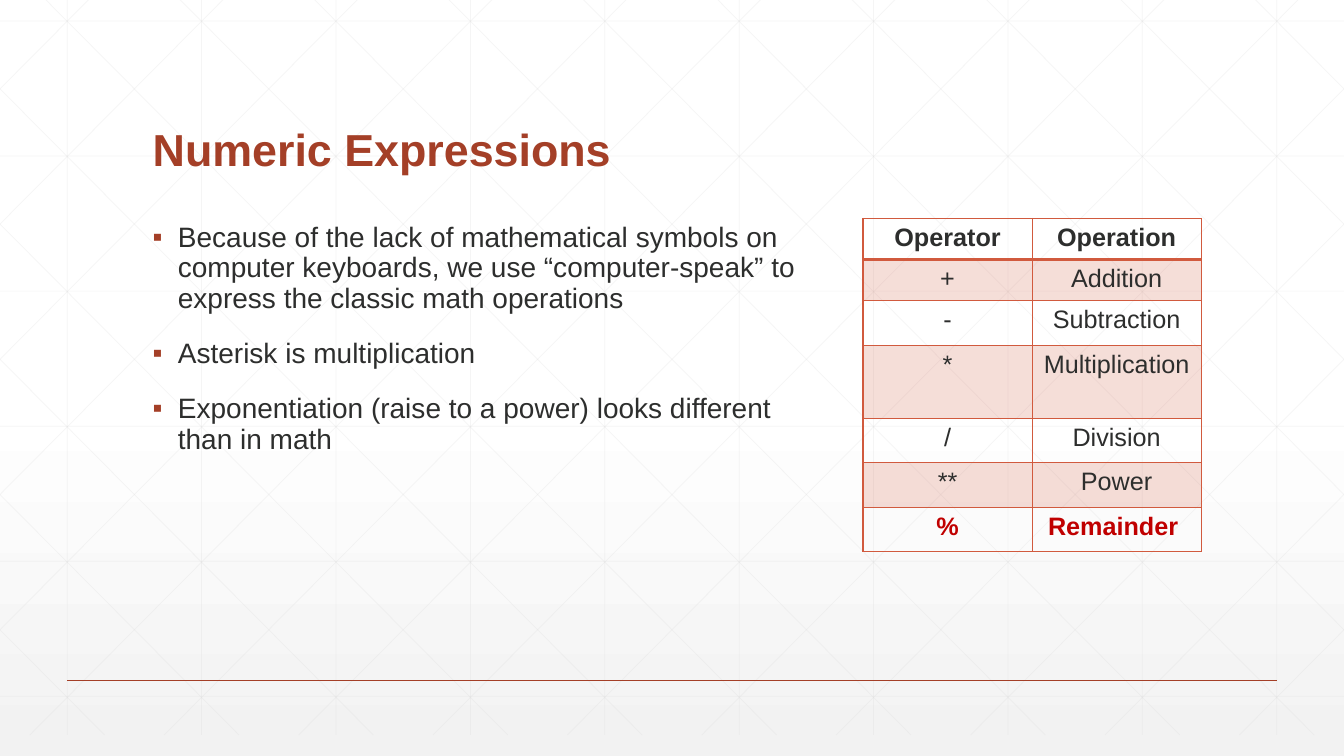
from copy import deepcopy

from lxml.etree import SubElement
from pptx import Presentation
from pptx.dml.color import RGBColor
from pptx.enum.shapes import MSO_CONNECTOR
from pptx.enum.text import MSO_ANCHOR, PP_ALIGN
from pptx.oxml.ns import qn
from pptx.util import Inches, Pt

COLUMNS, ROWS = 160, 90
COLORS = {
    "white": "FFFFFF",
    "haze": "F2F2F2",
    "mesh": "D9D9D9",
    "rust": "A43F27",
    "coral": "D15A3E",
    "ink": "2D2E2D",
    "alert": "C00000",
}
FORMATS = {
    "title": {"size": Pt(32), "bold": True, "name": "Arial"},
    "body": {"size": Pt(20), "bold": False, "name": "Arial"},
    "cell": {"size": Pt(18), "bold": False, "name": "Arial"},
    "strong": {"size": Pt(18), "bold": True, "name": "Arial"},
}
POINTS = [
    "Because of the lack of mathematical symbols on computer keyboards, "
    "we use “computer-speak” to express the classic math operations",
    "Asterisk is multiplication",
    "Exponentiation (raise to a power) looks different than in math",
]
OPERATORS = [
    ("Operator", "Operation"),
    ("+", "Addition"),
    ("-", "Subtraction"),
    ("*", "Multiplication"),
    ("/", "Division"),
    ("**", "Power"),
    ("%", "Remainder "),
]
ROW_HEIGHTS = [4.9, 4.9, 5.3, 8.7, 5.3, 5.3, 5.3]


def rgb(color):
    return RGBColor.from_string(COLORS[color])


def set_values(target, values):
    for attribute, value in values.items():
        setattr(target, attribute, value)


def set_alpha(element, percent):
    SubElement(element.find(".//" + qn("a:srgbClr")), qn("a:alpha"), val=str(percent * 1000))


class GridSlide:
    """Draws styled elements on one slide measured in grid columns and rows."""

    def __init__(self, deck):
        set_values(deck, {"slide_width": Inches(13.333), "slide_height": Inches(7.5)})
        self.column = deck.slide_width / COLUMNS
        self.row = deck.slide_height / ROWS
        self.slide = deck.slides.add_slide(deck.slide_layouts[6])

    def place(self, *lengths):
        return [round(length * (self.row if index % 2 else self.column))
                for index, length in enumerate(lengths)]

    def background(self):
        fill = self.slide.background.fill
        fill.gradient()
        fill.gradient_angle = 270
        stop_list = self.slide.element.find(".//" + qn("a:gsLst"))
        stop_list.insert(1, deepcopy(stop_list[0]))
        for stop, position, color in zip(fill.gradient_stops, (0, 0.53, 1), ("white", "white", "haze")):
            stop.position = position
            stop.color.rgb = rgb(color)

    def line(self, start, end, color, width, alpha=100):
        stroke = self.slide.shapes.add_connector(MSO_CONNECTOR.STRAIGHT, *self.place(*start, *end))
        stroke.line.color.rgb = rgb(color)
        stroke.line.width = Pt(width)
        properties = stroke.element.spPr
        if alpha < 100:
            set_alpha(properties, alpha)
        SubElement(properties, qn("a:effectLst"))

    def add_words(self, paragraph, words, style, color, **layout):
        set_values(paragraph, layout)
        run = paragraph.add_run()
        run.text = words
        set_values(run.font, FORMATS[style])
        run.font.color.rgb = rgb(color)

    def text(self, area, lines, style, color, anchor, bulleted=False):
        frame = self.slide.shapes.add_textbox(*self.place(*area)).text_frame
        set_values(frame, {"word_wrap": True, "vertical_anchor": anchor})
        for index, content in enumerate(lines):
            paragraph = frame.add_paragraph() if index else frame.paragraphs[0]
            self.add_words(paragraph, content, style, color, line_spacing=0.9,
                           space_before=Pt(18 if bulleted else 0))
            if bulleted:
                self.bullet(paragraph)

    def bullet(self, paragraph):
        properties = paragraph._p.get_or_add_pPr()
        properties.set("marL", str(Inches(0.25)))
        properties.set("indent", str(Inches(-0.25)))
        SubElement(SubElement(properties, qn("a:buClr")), qn("a:srgbClr"), val=COLORS["rust"])
        SubElement(properties, qn("a:buFont"), typeface="Arial")
        SubElement(properties, qn("a:buChar"), char="▪")

    def borders(self, cell, widths):
        properties = cell._tc.get_or_add_tcPr()
        for side, width in zip("LRTB", widths):
            edge = SubElement(properties, qn("a:ln" + side), w=str(Pt(width)))
            SubElement(SubElement(edge, qn("a:solidFill")), qn("a:srgbClr"), val=COLORS["coral"])

    def table(self, left, top, width, heights, entries):
        area = self.place(left, top, width, sum(heights))
        grid = self.slide.shapes.add_table(len(entries), len(entries[0]), *area).table
        set_values(grid, {"first_row": False, "horz_banding": False})
        last = len(entries) - 1
        for index, (height, entry) in enumerate(zip(heights, entries)):
            grid.rows[index].height = round(height * self.row)
            style = "strong" if index in (0, last) else "cell"
            color = "alert" if index == last else "ink"
            for cell, content in zip(grid.rows[index].cells, entry):
                self.add_words(cell.text_frame.paragraphs[0], content, style, color,
                               alignment=PP_ALIGN.CENTER)
                self.borders(cell, (1, 1, 2 if index == 1 else 1, 1 if index else 2))
                if index % 2:
                    cell.fill.solid()
                    cell.fill.fore_color.rgb = rgb("coral")
                    set_alpha(cell._tc.tcPr.find(qn("a:solidFill")), 20)
                else:
                    cell.fill.background()

    def mesh(self):
        top, bottom, pitch, run = -2.5, 87.5, 16, 89.45
        slope = (bottom - top) / run
        strokes = [((8 + pitch * k, top), (8 + pitch * k, bottom)) for k in range(10)]
        strokes += [((0, 2.5 + 16.08 * k), (COLUMNS, 2.5 + 16.08 * k)) for k in range(6)]
        for k in range(-5, 10):
            origin = 3 + pitch * k
            start, end = max(origin, 0), min(origin + run, COLUMNS)
            high, low = (top + (x - origin) * slope for x in (start, end))
            strokes.append(((start, high), (end, low)))
            strokes.append(((COLUMNS - start, high), (COLUMNS - end, low)))
        for start, end in strokes:
            self.line(start, end, "mesh", 0.5, 25)


def main():
    deck = Presentation()
    page = GridSlide(deck)
    page.background()
    page.mesh()
    page.line((8, 81), (152, 81), "rust", 1)
    page.text((17, 6.6, 126, 15), ["Numeric Expressions"], "title", "rust", MSO_ANCHOR.BOTTOM)
    page.text((17, 26, 81.8, 50), POINTS, "body", "ink", MSO_ANCHOR.TOP, bulleted=True)
    page.table(102.75, 26, 40.25, ROW_HEIGHTS, OPERATORS)
    deck.save("out.pptx")


if __name__ == "__main__":
    main()
